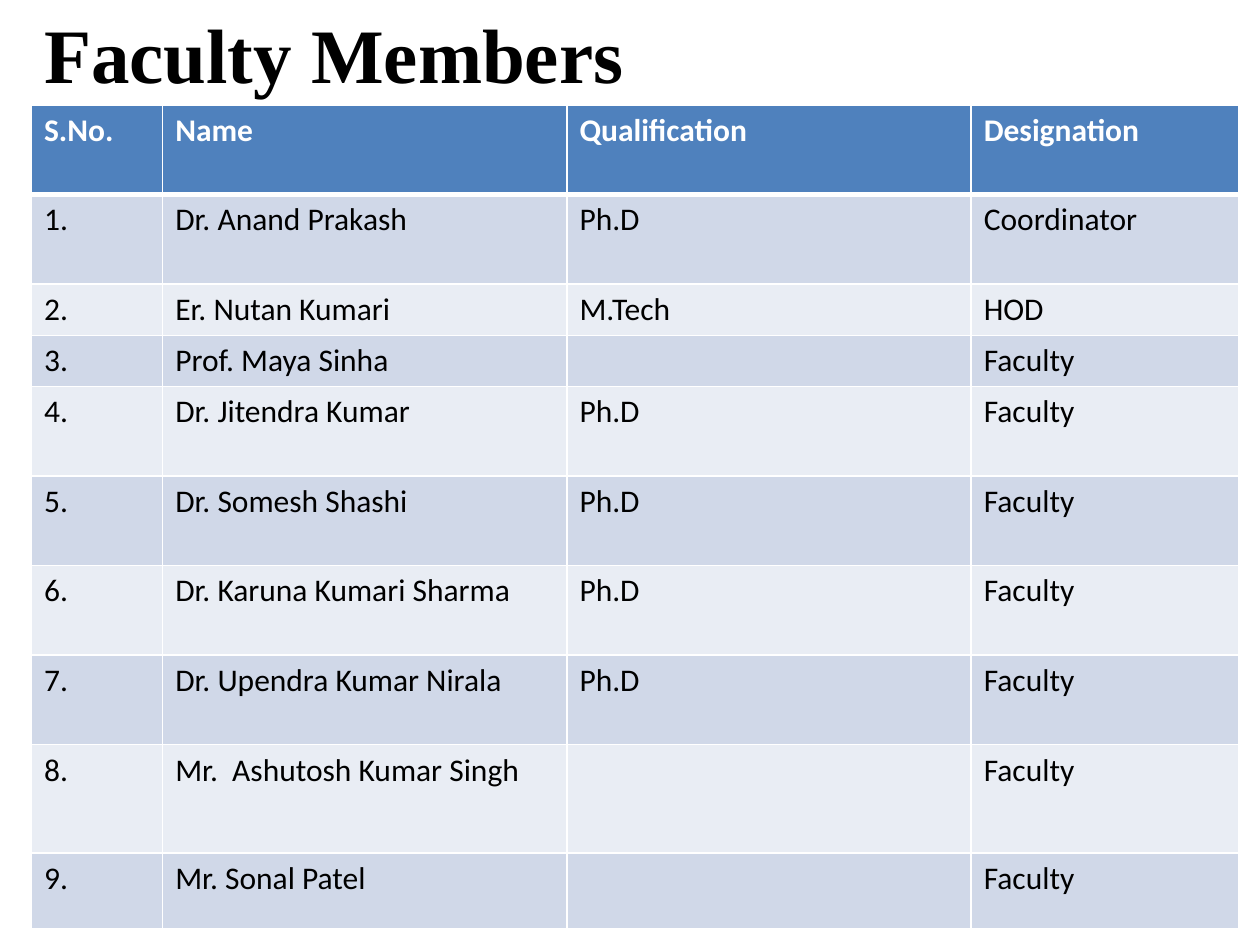
from lxml import etree
from pptx import Presentation
from pptx.dml.color import RGBColor
from pptx.enum.text import MSO_ANCHOR, MSO_AUTO_SIZE, PP_ALIGN
from pptx.oxml.ns import qn
from pptx.util import Pt

TOP = MSO_ANCHOR.TOP
GROW = MSO_AUTO_SIZE.SHAPE_TO_FIT_TEXT
LEFT = PP_ALIGN.LEFT

TITLE = "Faculty Members"
HEAD = ("S.No.", "Name", "Qualification", "Designation")
STAFF = [
    ("Dr. Anand Prakash", "Ph.D", "Coordinator"),
    ("Er. Nutan Kumari", "M.Tech", "HOD"),
    ("Prof. Maya Sinha", "", "Faculty"),
    ("Dr. Jitendra Kumar", "Ph.D", "Faculty"),
    ("Dr. Somesh Shashi", "Ph.D", "Faculty"),
    ("Dr. Karuna Kumari Sharma", "Ph.D", "Faculty"),
    ("Dr. Upendra Kumar Nirala", "Ph.D", "Faculty"),
    ("Mr.  Ashutosh Kumar Singh", "", "Faculty"),
    ("Mr. Sonal Patel", "", "Faculty"),
]
THEME = {
    "title": ("Times New Roman", 44, True, "000000"),
    "head": ("Calibri", 18, True, "FFFFFF"),
    "body": ("Calibri", 18, False, "000000"),
    "blue": "4F81BD",
    "bands": ("D0D8E8", "E9EDF4"),
    "rule": "FFFFFF",
}
EDGE = 18
TABLE_TOP = 60
COLS = (75, 231, 231, 153)
TALL, SHORT = 51.2, 29.2
ROWS = [TALL] * 2 + [SHORT] * 2 + [TALL] * 4 + [61.9, 43.2]


def style(para, role):
    face, size, bold, color = THEME[role]
    font = para.font
    font.name, font.size, font.bold = face, Pt(size), bold
    font.color.rgb = RGBColor.from_string(color)
    para.alignment = LEFT


def border(cell, widths):
    props = cell._tc.get_or_add_tcPr()
    for spot, (side, width) in enumerate(widths.items()):
        line = etree.Element(qn("a:ln" + side), w=str(Pt(width)))
        fill = etree.SubElement(line, qn("a:solidFill"))
        etree.SubElement(fill, qn("a:srgbClr"), val=THEME["rule"])
        props.insert(spot, line)


def add_title(slide):
    title = slide.shapes.title
    title.left, title.top = Pt(EDGE), Pt(0)
    title.width, title.height = Pt(386), Pt(60.5)
    frame = title.text_frame
    frame.text = TITLE
    frame.word_wrap = True
    frame.auto_size = GROW
    frame.vertical_anchor = TOP
    style(frame.paragraphs[0], "title")


def add_staff(slide):
    data = [HEAD] + [(f"{num}.", *row) for num, row in enumerate(STAFF, 1)]
    table = slide.shapes.add_table(
        len(data), len(HEAD), Pt(EDGE), Pt(TABLE_TOP), Pt(sum(COLS)), Pt(sum(ROWS))
    ).table
    for col, width in zip(table.columns, COLS):
        col.width = Pt(width)
    for row, height in zip(table.rows, ROWS):
        row.height = Pt(height)
    for r, row in enumerate(data):
        tint = THEME["bands"][(r - 1) % 2] if r else THEME["blue"]
        rules = {"L": 1, "R": 1, "T": 3 if r == 1 else 1, "B": 1 if r else 3}
        for c, text in enumerate(row):
            cell = table.cell(r, c)
            cell.text = text
            style(cell.text_frame.paragraphs[0], "body" if r else "head")
            cell.fill.solid()
            cell.fill.fore_color.rgb = RGBColor.from_string(tint)
            border(cell, rules)


def main():
    deck = Presentation()
    deck.slide_width, deck.slide_height = Pt(720), Pt(540)
    slide = deck.slides.add_slide(deck.slide_layouts[5])
    add_title(slide)
    add_staff(slide)
    deck.save("out.pptx")


if __name__ == "__main__":
    main()
